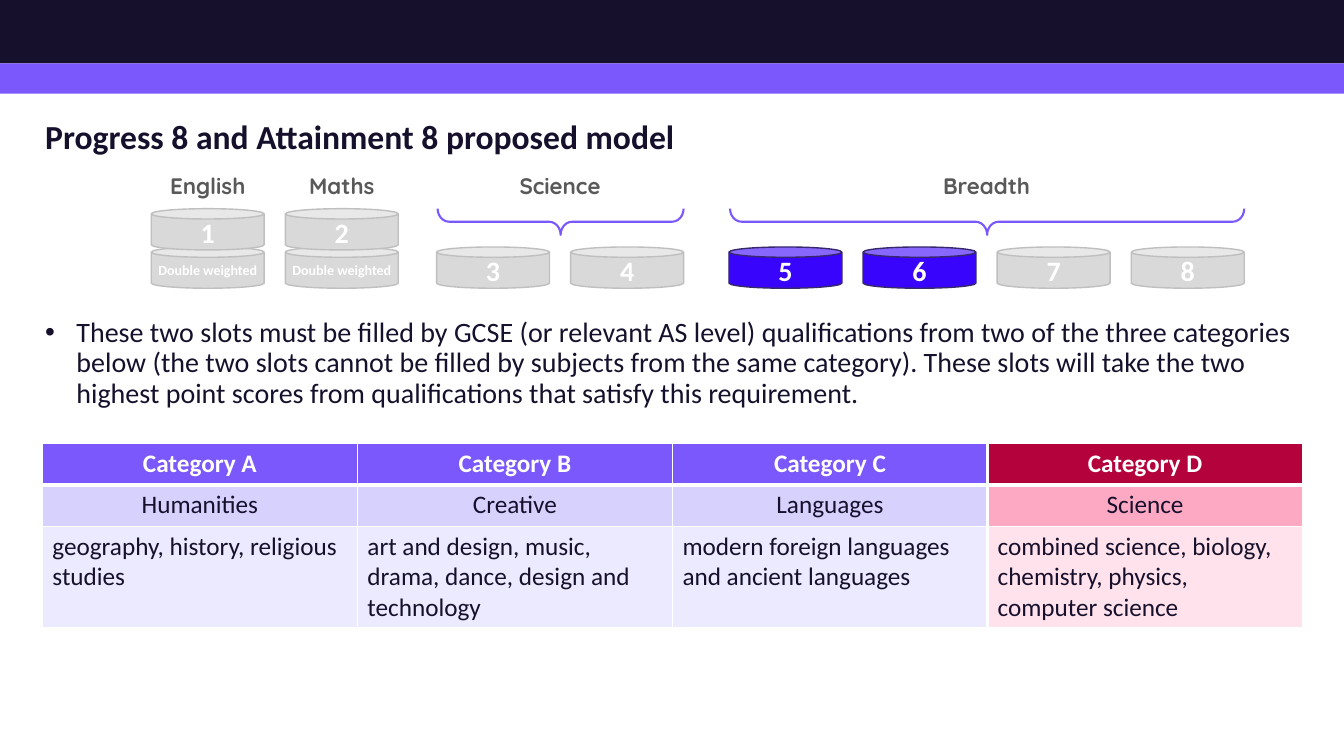
from lxml import etree
from pptx import Presentation
from pptx.dml.color import RGBColor
from pptx.enum.shapes import MSO_SHAPE
from pptx.enum.text import MSO_ANCHOR, PP_ALIGN
from pptx.oxml.ns import qn
from pptx.util import Inches, Pt

RECT, CAN, BRACE = MSO_SHAPE.RECTANGLE, MSO_SHAPE.CAN, MSO_SHAPE.RIGHT_BRACE
LEFT, CENTER = PP_ALIGN.LEFT, PP_ALIGN.CENTER
TOP, MIDDLE = MSO_ANCHOR.TOP, MSO_ANCHOR.MIDDLE

NAVY = RGBColor(0x16, 0x10, 0x2C)
PURPLE = RGBColor(0x7B, 0x58, 0xFC)
LILAC = RGBColor(0xD7, 0xD1, 0xFE)
PALE_LILAC = RGBColor(0xEC, 0xEA, 0xFE)
CRIMSON = RGBColor(0xB4, 0x02, 0x3C)
PINK = RGBColor(0xFE, 0xA9, 0xC4)
PALE_PINK = RGBColor(0xFF, 0xE2, 0xEB)
BLUE = RGBColor(0x39, 0x04, 0xFB)
BLUE_EDGE = RGBColor(0x36, 0x27, 0x6E)
GREY = RGBColor(0xD9, 0xD9, 0xD9)
GREY_EDGE = RGBColor(0xBF, 0xBF, 0xBF)
LABEL_GREY = RGBColor(0x59, 0x59, 0x59)
WHITE = RGBColor(0xFF, 0xFF, 0xFF)

CAN_W, CAN_H, CAN_PITCH = 1.12, 0.41, 1.33
SLOT_GROUPS = [
    ("English", 0, [1], True),
    ("Maths", 1.33, [2], True),
    ("Science", 2.83, [3, 4], False),
    ("Breadth", 5.73, [5, 6, 7, 8], False),
]
OPEN_SLOTS = (5, 6)

CATEGORIES = [
    ("Category A", "Humanities", "geography, history, religious studies"),
    ("Category B", "Creative",
     "art and design, music, drama, dance, design and technology"),
    ("Category C", "Languages",
     "modern foreign languages and ancient languages"),
    ("Category D", "Science",
     "combined science, biology, chemistry, physics, computer science"),
]
ROW_HEIGHTS = (0.41, 0.41, 1.01)
MAIN_FILLS = (PURPLE, LILAC, PALE_LILAC)
LAST_FILLS = (CRIMSON, PINK, PALE_PINK)


def write(tf, text, size=20, color=NAVY, bold=False, font="Calibri",
          align=LEFT, anchor=TOP, spacing=None, bullet=None, inset=None):
    tf.word_wrap = True
    tf.vertical_anchor = anchor
    if inset:
        tf.margin_left = tf.margin_right = Inches(inset[0])
        tf.margin_top = tf.margin_bottom = Inches(inset[1])
    p = tf.paragraphs[0]
    p.alignment = align
    if spacing:
        p.line_spacing = spacing
    if bullet:
        pPr = p._p.get_or_add_pPr()
        pPr.set("marL", str(Inches(bullet)))
        pPr.set("indent", str(-Inches(bullet)))
        etree.SubElement(pPr, qn("a:buFont")).set("typeface", "Arial")
        etree.SubElement(pPr, qn("a:buChar")).set("char", "•")
    r = p.add_run()
    r.text = text
    r.font.size = Pt(size)
    r.font.name = font
    r.font.bold = bold
    r.font.color.rgb = color


def add_text(s, x, y, w, h, text, **fmt):
    sp = s.shapes.add_textbox(Inches(x), Inches(y), Inches(w), Inches(h))
    write(sp.text_frame, text, **fmt)


def add_shape(s, kind, x, y, w, h, fill=None, line=None, width=1):
    sp = s.shapes.add_shape(kind, Inches(x), Inches(y), Inches(w), Inches(h))
    sp.shadow.inherit = False
    if fill is None:
        sp.fill.background()
    else:
        sp.fill.solid()
        sp.fill.fore_color.rgb = fill
    if line is None:
        sp.line.fill.background()
    else:
        sp.line.color.rgb = line
        sp.line.width = Pt(width)
    return sp


def add_banner(s, x, y, w, h):
    stripe = 0.3
    add_shape(s, RECT, x, y, w, h - stripe, NAVY)
    add_shape(s, RECT, x, y + h - stripe, w, stripe, PURPLE)


def add_can(s, x, y, text, size=20, fill=GREY, line=GREY_EDGE, side=0.1):
    sp = add_shape(s, CAN, x, y, CAN_W, CAN_H, fill, line)
    write(sp.text_frame, text, size=size, color=WHITE, bold=True,
          align=CENTER, anchor=MIDDLE, inset=(side, 0))


def add_brace(s, x, y, w, h):
    sp = add_shape(s, BRACE, x + (w - h) / 2, y + (h - w) / 2, h, w,
                   line=PURPLE, width=1.5)
    sp.rotation = 90
    sp.adjustments[0] = 0.44


def add_slots(s, x, y, w, h):
    can_top = y + h - CAN_H
    upper_top = can_top - 0.38
    for label, offset, slots, double in SLOT_GROUPS:
        left = x + offset
        width = CAN_W + CAN_PITCH * (len(slots) - 1)
        add_text(s, left, y, width, 0.37, label, size=16, color=LABEL_GREY,
                 bold=True, font="Quicksand", align=CENTER,
                 inset=(0.04, 0.05))
        if double:
            add_can(s, left, can_top, "Double weighted", size=10, side=0)
        else:
            add_brace(s, left + 0.01, upper_top, width - 0.01, 0.26)
        for i, slot in enumerate(slots):
            is_open = slot in OPEN_SLOTS
            add_can(s, left + i * CAN_PITCH,
                    upper_top if double else can_top, str(slot),
                    fill=BLUE if is_open else GREY,
                    line=BLUE_EDGE if is_open else GREY_EDGE)


def set_borders(cell, left, right, top, bottom):
    tcPr = cell._tc.get_or_add_tcPr()
    sides = (("a:lnL", left), ("a:lnR", right),
             ("a:lnT", top), ("a:lnB", bottom))
    for i, (tag, width) in enumerate(sides):
        ln = etree.Element(qn(tag), w=str(Pt(width)))
        fill = etree.SubElement(ln, qn("a:solidFill"))
        etree.SubElement(fill, qn("a:srgbClr")).set("val", str(WHITE))
        tcPr.insert(i, ln)


def add_categories(s, x, y, w, h):
    rows, cols = len(ROW_HEIGHTS), len(CATEGORIES)
    table = s.shapes.add_table(rows, cols, Inches(x), Inches(y),
                               Inches(w), Inches(h)).table
    table.first_row = table.horz_banding = False
    for row, height in zip(table.rows, ROW_HEIGHTS):
        row.height = Inches(height)
    last = cols - 1
    for c, texts in enumerate(CATEGORIES):
        table.columns[c].width = Inches(w / cols)
        fills = LAST_FILLS if c == last else MAIN_FILLS
        for r, text in enumerate(texts):
            cell = table.cell(r, c)
            cell.fill.solid()
            cell.fill.fore_color.rgb = fills[r]
            write(cell.text_frame, text, size=18, bold=r == 0,
                  color=WHITE if r == 0 else NAVY,
                  align=LEFT if r == rows - 1 else CENTER)
            set_borders(cell, left=3 if c == last else 1,
                        right=3 if c == last - 1 else 1,
                        top=3 if r == 1 else 1, bottom=3 if r == 0 else 1)


def main():
    prs = Presentation()
    prs.slide_width, prs.slide_height = Inches(13.33), Inches(7.5)
    s = prs.slides.add_slide(prs.slide_layouts[6])
    add_banner(s, 0, 0, 13.33, 0.93)
    add_text(s, 0.35, 1.1, 6.57, 0.56,
             "Progress 8 and Attainment 8 proposed model",
             size=24, bold=True, anchor=MIDDLE, spacing=0.9)
    add_slots(s, 1.5, 1.66, 10.84, 1.2)
    add_text(s, 0.35, 3.11, 12.63, 1.1,
             "These two slots must be filled by GCSE (or relevant AS level) "
             "qualifications from two of the three categories below (the two "
             "slots cannot be filled by subjects from the same category). "
             "These slots will take the two highest point scores from "
             "qualifications that satisfy this requirement.",
             spacing=0.9, bullet=0.31)
    add_categories(s, 0.42, 4.4, 12.5, sum(ROW_HEIGHTS))
    prs.save("out.pptx")


if __name__ == "__main__":
    main()
